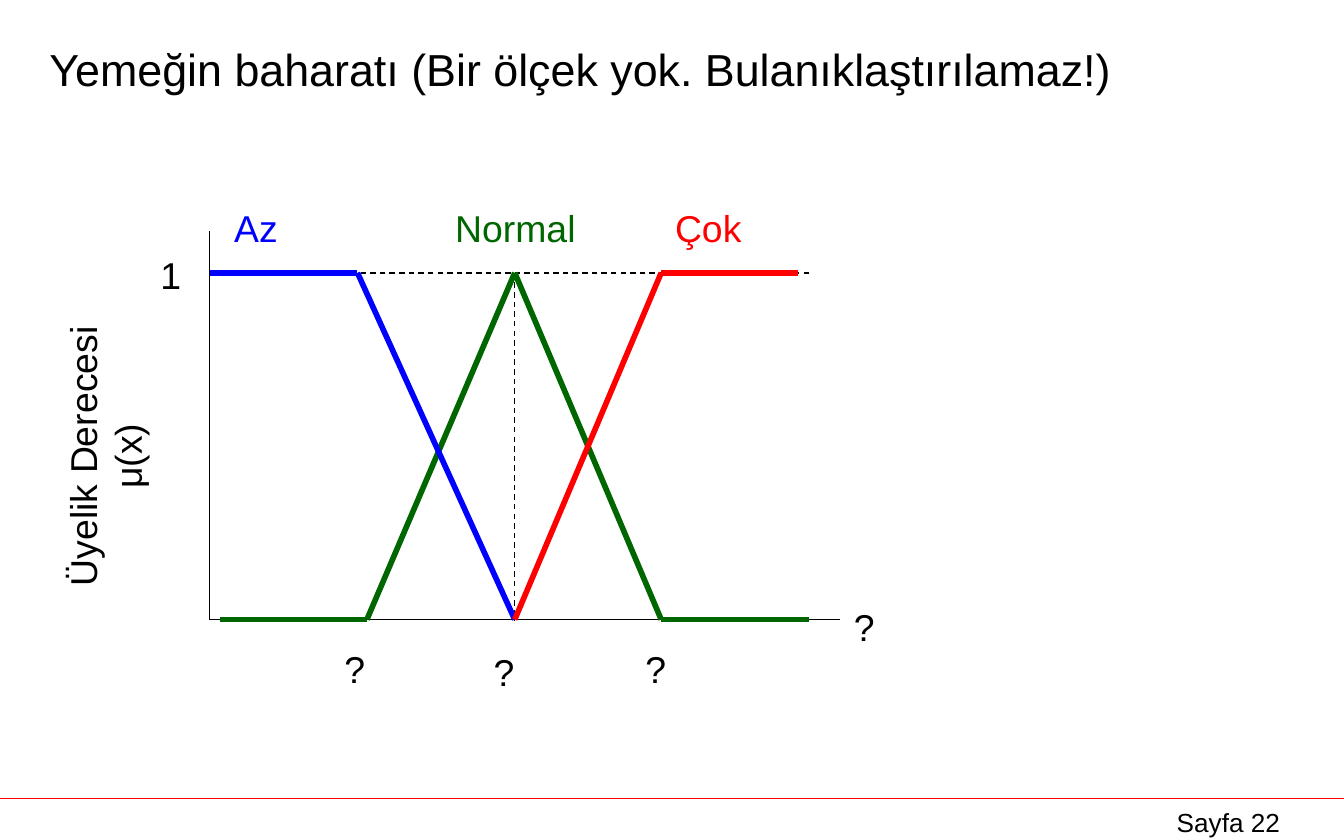
from dataclasses import dataclass

from lxml import etree
from pptx import Presentation
from pptx.dml.color import RGBColor
from pptx.enum.dml import MSO_LINE
from pptx.enum.shapes import MSO_CONNECTOR
from pptx.enum.text import PP_ALIGN
from pptx.oxml.ns import qn
from pptx.slide import Slide
from pptx.util import Inches, Pt

STRAIGHT = MSO_CONNECTOR.STRAIGHT
DASH = MSO_LINE.DASH
LEFT, CENTER = PP_ALIGN.LEFT, PP_ALIGN.CENTER

BLACK = RGBColor(0x00, 0x00, 0x00)
RED = RGBColor(0xFF, 0x00, 0x00)
GREEN = RGBColor(0x00, 0x66, 0x00)
BLUE = RGBColor(0x00, 0x00, 0xFF)

FONT = "Arial"
THIN, THICK = 0.75, 3
LABEL_HEIGHT = 0.44

# Key positions of the membership chart, in inches
AXIS_X, AXIS_TOP, AXIS_END = 1.56, 1.72, 6.25
ZERO_Y, ONE_Y = 4.61, 2.03
LOW_X, PEAK_X, HIGH_X = 2.73, 3.83, 4.92
PLOT_END = 6.02


@dataclass
class Path:
    """A chain of straight segments through the given points."""
    points: list[tuple[float, float]]
    color: RGBColor = BLACK
    weight: float = THIN
    dashed: bool = False


@dataclass
class Label:
    text: str
    left: float
    top: float
    width: float
    height: float = LABEL_HEIGHT
    color: RGBColor = BLACK
    size: int = 20
    align: PP_ALIGN = CENTER
    wrap: bool = False
    rotation: int = 0


PATHS = [
    Path([(0, 5.94), (10, 5.94)], RED),
    Path([(AXIS_X, AXIS_TOP), (AXIS_X, ZERO_Y), (AXIS_END, ZERO_Y)]),
    Path([(PEAK_X, ONE_Y), (PEAK_X, ZERO_Y)], dashed=True),
    Path([(PLOT_END, ONE_Y), (AXIS_X, ONE_Y)], dashed=True),
    Path([(1.64, ZERO_Y), (LOW_X, ZERO_Y), (PEAK_X, ONE_Y),
          (HIGH_X, ZERO_Y), (PLOT_END, ZERO_Y)], GREEN, THICK),
    Path([(AXIS_X, ONE_Y), (2.66, ONE_Y), (PEAK_X, ZERO_Y)], BLUE, THICK),
    Path([(PEAK_X, ZERO_Y), (HIGH_X, ONE_Y), (5.94, ONE_Y)], RED, THICK),
]

LABELS = [
    Label("Yemeğin baharatı (Bir ölçek yok. Bulanıklaştırılamaz!)",
          0.27, 0.26, 9.53, 0.5, size=24, align=LEFT, wrap=True),
    Label("Sayfa 22", 8.39, 5.95, 1.5, 0.26, size=14, wrap=True),
    Label("Üyelik Derecesi μ(x)", -0.43, 3.01, 2.42, 0.77,
          wrap=True, rotation=270),
    Label("1", 1.09, 1.83, 0.36),
    Label("?", 2.46, 4.76, 0.36),
    Label("?", 3.57, 4.78, 0.36),
    Label("?", 4.7, 4.76, 0.36),
    Label("?", 6.25, 4.45, 0.36),
    Label("Az", 1.64, 1.48, 0.53, color=BLUE),
    Label("Normal", 3.28, 1.48, 1.11, color=GREEN),
    Label("Çok", 4.92, 1.48, 0.7, color=RED),
]


def draw_path(page: Slide, path: Path) -> None:
    for start, end in zip(path.points, path.points[1:]):
        ends = [Inches(value) for value in (*start, *end)]
        segment = page.shapes.add_connector(STRAIGHT, *ends)
        segment.line.color.rgb = path.color
        segment.line.width = Pt(path.weight)
        if path.dashed:
            segment.line.dash_style = DASH
        etree.SubElement(segment._element.spPr, qn("a:effectLst"))


def draw_label(page: Slide, label: Label) -> None:
    box = page.shapes.add_textbox(Inches(label.left), Inches(label.top),
                                  Inches(label.width), Inches(label.height))
    box.rotation = label.rotation
    box.text_frame.word_wrap = label.wrap
    box.text_frame.text = label.text
    para = box.text_frame.paragraphs[0]
    para.alignment = label.align
    font = para.runs[0].font
    font.name = FONT
    font.size = Pt(label.size)
    font.color.rgb = label.color


def main() -> None:
    deck = Presentation()
    deck.slide_width, deck.slide_height = Inches(10), Inches(6.25)
    page = deck.slides.add_slide(deck.slide_layouts[6])
    for path in PATHS:
        draw_path(page, path)
    for label in LABELS:
        draw_label(page, label)
    deck.save("out.pptx")


if __name__ == "__main__":
    main()
